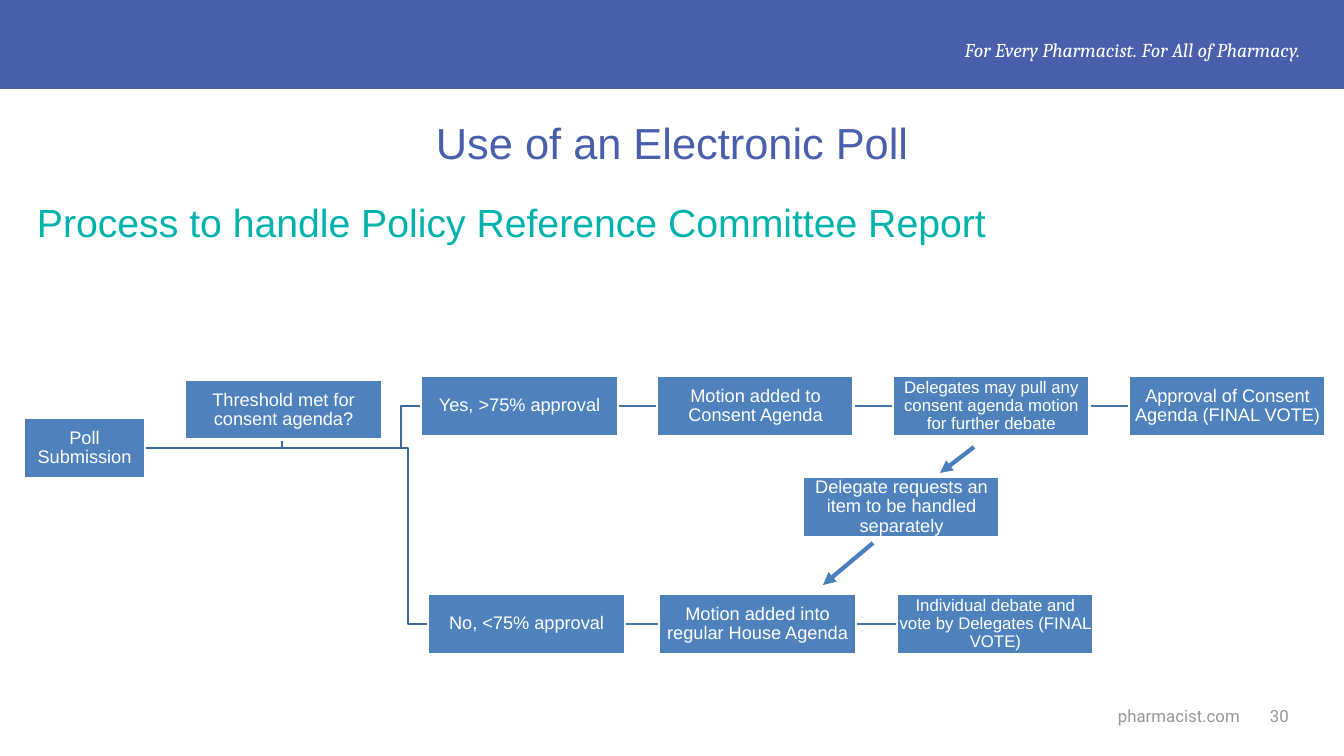
import pptx
import pptx.util
import pptx.dml.color
import pptx.enum.shapes
import pptx.enum.text
import pptx.oxml
import pptx.oxml.ns
from dataclasses import dataclass

SCALE = 914400 / 100.8
Align = pptx.enum.text.PP_ALIGN
Anchor = pptx.enum.text.MSO_ANCHOR
Kind = pptx.enum.shapes.MSO_SHAPE
LINK = pptx.enum.shapes.MSO_CONNECTOR.STRAIGHT


def px(n):
    return pptx.util.Emu(round(n * SCALE))


def rgb(code):
    return pptx.dml.color.RGBColor.from_string(code)


@dataclass(frozen=True)
class Theme:
    brand: str = "4A5FAB"
    teal: str = "00B3AA"
    white: str = "FFFFFF"
    gray: str = "969799"
    box: str = "4F81BD"
    link: str = "4875AC"
    bend: str = "3F6797"
    arrow: str = "4B7EBC"
    sans: str = "Arial"
    serif: str = "Cambria"
    foot: str = "Roboto"
    title: int = 31
    head: int = 28
    motto: int = 14
    label: int = 13
    small: int = 12


class Board:
    def __init__(self, deck, theme):
        self.theme = theme
        self.slide = deck.slides.add_slide(deck.slide_layouts[6])
        self.shapes = self.slide.shapes

    def fill_in(self, frame, text, size, color, face, align, pad):
        frame.word_wrap = True
        frame.margin_left, frame.margin_top, frame.margin_right, frame.margin_bottom = map(px, pad)
        par = frame.paragraphs[0]
        par.text = text
        par.alignment = align
        par.font.size = pptx.util.Pt(size)
        par.font.name = face
        par.font.color.rgb = rgb(color)
        return par

    def text(self, area, text, size, color, face, align=Align.LEFT, pad=(0, 0, 0, 0)):
        frame = self.shapes.add_textbox(*map(px, area)).text_frame
        return self.fill_in(frame, text, size, color, face, align, pad)

    def rect(self, area, fill):
        shape = self.shapes.add_shape(Kind.RECTANGLE, *map(px, area))
        shape.shadow.inherit = False
        shape.fill.solid()
        shape.fill.fore_color.rgb = rgb(fill)
        shape.line.fill.background()
        return shape

    def step(self, x, y, text, size=None, wide=197):
        look = self.theme
        shape = self.rect((x, y, wide, 60), look.box)
        self.stroke(shape, look.white, 2)
        frame = shape.text_frame
        frame.vertical_anchor = Anchor.MIDDLE
        par = self.fill_in(frame, text, size or look.label, look.white,
                           look.sans, Align.CENTER, (1, 1, 1, 1))
        par.line_spacing = 0.9
        return shape

    def stroke(self, shape, color, width):
        shape.line.color.rgb = rgb(color)
        shape.line.width = pptx.util.Pt(width)

    def bend(self, start, *turns):
        route = self.shapes.build_freeform(*start, scale=SCALE)
        route.add_line_segments(turns, close=False)
        shape = route.convert_to_shape()
        shape.shadow.inherit = False
        shape.fill.background()
        self.stroke(shape, self.theme.bend, 2)

    def line(self, ends, color, width):
        line = self.shapes.add_connector(LINK, *map(px, ends))
        self.stroke(line, color, width)
        line.element.spPr.append(pptx.oxml.parse_xml(
            "<a:effectLst %s/>" % pptx.oxml.ns.nsdecls("a")))
        return line

    def join(self, left, right):
        line = self.line((0, 0, 0, 0), self.theme.link, 2)
        line.begin_connect(left, 3)
        line.end_connect(right, 1)
        self.shapes.element.insert(2, line.element)

    def arrow(self, *ends):
        line = self.line(ends, self.theme.arrow, 3)
        line.element.spPr.find(pptx.oxml.ns.qn("a:ln")).append(pptx.oxml.parse_xml(
            '<a:tailEnd %s type="triangle"/>' % pptx.oxml.ns.nsdecls("a")))

    def chain(self, steps):
        for left, right in zip(steps, steps[1:]):
            self.join(left, right)


def main():
    deck = pptx.Presentation()
    deck.slide_width, deck.slide_height = px(1344), px(756)
    look = Theme()
    board = Board(deck, look)

    board.rect((0, 0, 1344, 89), look.brand)
    motto = board.text((849, 33, 462, 34), "For Every Pharmacist. For All of Pharmacy.",
                       look.motto, look.white, look.serif, Align.RIGHT, (10, 5, 10, 5))
    motto.font.italic = True

    poll, yes, no = (145, 448), (421, 406), (428, 624)
    board.bend(poll, (282, 448), (282, 440))
    board.bend(poll, (408, 448), (408, 624), no)
    board.bend(poll, (401, 448), (401, 406), yes)

    board.step(24, 418, "Poll Submission", wide=121)
    board.step(185, 380, "Threshold met for consent agenda?")
    consent = [
        ("Yes, >75% approval", look.label),
        ("Motion added to Consent Agenda", look.label),
        ("Delegates may pull any consent agenda motion for further debate", look.small),
        ("Approval of Consent Agenda (FINAL VOTE)", look.label),
    ]
    board.chain([board.step(421 + 236 * i, 376, *item) for i, item in enumerate(consent)])
    debate = [
        (428, "No, <75% approval", look.label),
        (659, "Motion added into regular House Agenda", look.label),
        (897, "Individual debate and vote by Delegates (FINAL VOTE)", look.small),
    ]
    board.chain([board.step(x, 594, text, size) for x, text, size in debate])
    board.step(803, 477, "Delegate requests an item to be handled separately")

    board.text((37, 194, 1246, 47), "Process to handle Policy Reference Committee Report",
               look.head, look.teal, look.sans, pad=(0, 4, 0, 0))
    board.text((1117, 706, 125, 20), "pharmacist.com",
               look.small, look.gray, look.foot, pad=(1, 0, 0, 0))
    board.text((1266, 706, 29, 20), "30",
               look.small, look.gray, look.foot, pad=(4, 0, 0, 0))
    board.arrow(873, 543, 823, 585)
    board.arrow(974, 447, 940, 473)
    board.text((49, 112, 1246, 86), "Use of an Electronic Poll",
               look.title, look.brand, look.sans, Align.CENTER, (0, 4, 0, 0))

    deck.save("out.pptx")


if __name__ == "__main__":
    main()
